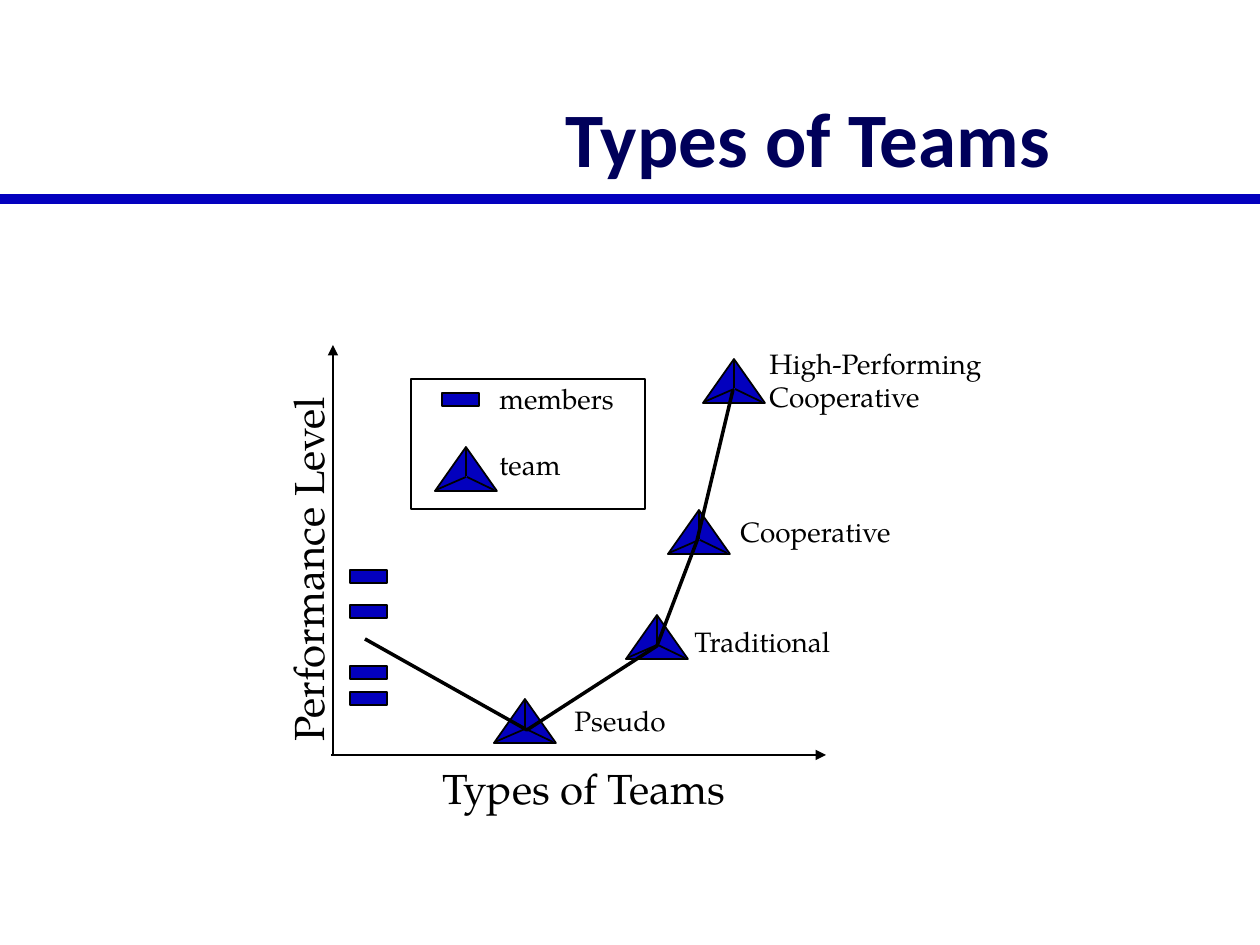
import pptx
import pptx.util
import pptx.dml.color
import pptx.enum.shapes
import pptx.enum.text
import pptx.oxml.ns
from lxml import etree

PX = 914400 / 126
COLORS = {"blue": "0300BE", "navy": "00005A", "black": "000000"}
SERIF = "TeX Gyre Pagella"
SHAPES = pptx.enum.shapes.MSO_SHAPE
ALIGN = pptx.enum.text.PP_ALIGN
ANCHOR = pptx.enum.text.MSO_ANCHOR

TEAMS = [
    (494, 699, ["Pseudo"], (562, 697, 130, 45)),
    (668, 510, ["Cooperative"], (728, 508, 184, 45)),
    (703, 359, ["High-Performing", "Cooperative"], (757, 340, 246, 79)),
    (626, 615, ["Traditional"], (682, 618, 172, 45)),
]
MEMBERS = [(350, 570), (350, 605), (350, 666), (350, 692)]
LEGEND_FRAME = (411, 379, 234, 130)
LEGEND_MEMBER = (442, 393)
LEGEND_TEAM = (435, 447)
AXES = [((333, 345), (333, 754)), ((826, 755), (331, 755))]
CURVE = [(365, 639), (527, 730), (657, 646), (697, 541), (733, 390)]
TEAM_SIZE = (62, 44)
MEMBER_SIZE = (37, 13)
SPOKES = [((31, 1), (31, 29)), ((31, 30), (1, 43)), ((32, 30), (59, 43))]


def emu(*lengths):
    return [round(length * PX) for length in lengths]


def rgb(name):
    return pptx.dml.color.RGBColor.from_string(COLORS[name])


def add_text(lines, box, size=16, font=SERIF, color="black", bold=False, align=ALIGN.LEFT,
             anchor=ANCHOR.TOP, rotation=0, gap=0):
    label = slide.shapes.add_textbox(*emu(*box))
    label.rotation = rotation
    frame = label.text_frame
    frame.word_wrap = True
    frame.vertical_anchor = anchor
    for index, line in enumerate(lines):
        paragraph = frame.paragraphs[0] if index == 0 else frame.add_paragraph()
        paragraph.alignment = align
        if index:
            paragraph.space_before = pptx.util.Pt(gap)
        run = paragraph.add_run()
        run.text = line
        run.font.size = pptx.util.Pt(size)
        run.font.name = font
        run.font.bold = bold
        run.font.color.rgb = rgb(color)


def add_line(start, end, width=1, color="black", arrow=False):
    line = slide.shapes.add_connector(
        pptx.enum.shapes.MSO_CONNECTOR.STRAIGHT, *emu(*start, *end))
    line.line.width = pptx.util.Pt(width)
    line.line.color.rgb = rgb(color)
    if arrow:
        etree.SubElement(line.line._get_or_add_ln(), pptx.oxml.ns.qn("a:headEnd"), type="triangle")
    etree.SubElement(line._element.spPr, pptx.oxml.ns.qn("a:effectLst"))


def style(shape, fill=None, width=1):
    shape.shadow.inherit = False
    if fill:
        shape.fill.solid()
        shape.fill.fore_color.rgb = rgb(fill)
    else:
        shape.fill.background()
    shape.line.color.rgb = rgb("black")
    shape.line.width = pptx.util.Pt(width)


def add_member(left, top):
    style(slide.shapes.add_shape(SHAPES.RECTANGLE, *emu(left, top, *MEMBER_SIZE)), "blue")


def add_team(left, top):
    style(slide.shapes.add_shape(SHAPES.ISOSCELES_TRIANGLE, *emu(left, top, *TEAM_SIZE)), "blue")
    for (x1, y1), (x2, y2) in SPOKES:
        add_line((left + x1, top + y1), (left + x2, top + y2))


deck = pptx.Presentation()
deck.slide_width, deck.slide_height = emu(1260, 945)
slide = deck.slides.add_slide(deck.slide_layouts[6])

add_line((0, 199), (1260, 199), width=6, color="blue")
add_text(["Types of Teams"], (388, 32, 840, 157), size=44, font="Calibri", color="navy",
         bold=True, align=ALIGN.CENTER, anchor=ANCHOR.BOTTOM)

for tip, origin in AXES:
    add_line(tip, origin, arrow=True)
add_text(["Performance Level"], (121, 538, 374, 63), size=24, rotation=270, align=ALIGN.CENTER)
add_text(["Types of Teams"], (343, 756, 482, 63), size=24, align=ALIGN.CENTER)

for member in MEMBERS:
    add_member(*member)
for left, top, name, name_box in TEAMS:
    add_team(left, top)
    add_text(name, name_box)

add_member(*LEGEND_MEMBER)
add_team(*LEGEND_TEAM)
add_text(["members", "team"], (487, 375, 148, 113), gap=19)
style(slide.shapes.add_shape(SHAPES.RECTANGLE, *emu(*LEGEND_FRAME)))

curve = slide.shapes.build_freeform(*CURVE[0], scale=PX)
curve.add_line_segments(CURVE[1:], close=False)
style(curve.convert_to_shape(), width=2)

deck.save("out.pptx")
